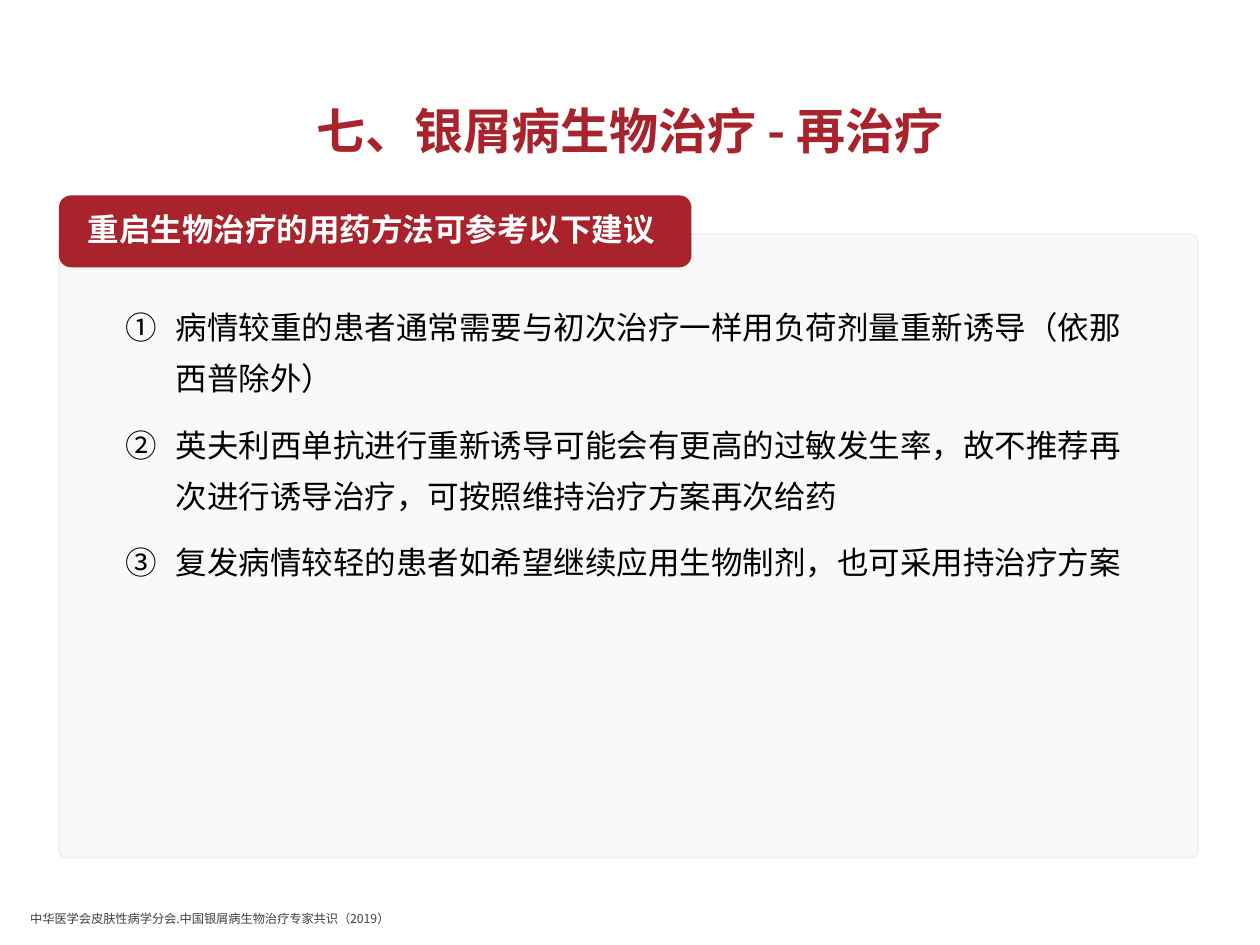
"""Build a slide of advice on restarting biologic treatment for psoriasis."""
from dataclasses import dataclass
from typing import Any, Optional

from lxml import etree
from pptx import Presentation
from pptx.dml.color import RGBColor
from pptx.enum import shapes, text
from pptx.oxml import ns
from pptx.util import Cm, Pt


@dataclass(frozen=True)
class Theme:
    font: str = "Noto Sans CJK SC"
    red: str = "A9232D"
    panel: str = "F9F9F9"
    edge: str = "F2F2F2"
    white: str = "FFFFFF"
    black: str = "000000"
    grey: str = "404040"
    title_size: float = 28
    body_size: float = 18
    source_size: float = 7


@dataclass(frozen=True)
class Box:
    left: float
    top: float
    width: float
    height: float

    def lengths(self) -> tuple:
        return tuple(Cm(v) for v in (self.left, self.top, self.width, self.height))


@dataclass(frozen=True)
class Style:
    size: float
    color: str
    bold: bool = False
    line_spacing: float = 1.0
    space_before: float = 0
    align: Any = text.PP_ALIGN.LEFT
    hanging: Optional[float] = None


THEME = Theme()
TITLE = "七、银屑病生物治疗 - 再治疗"
HEADING = "重启生物治疗的用药方法可参考以下建议"
ADVICE = (
    "病情较重的患者通常需要与初次治疗一样用负荷剂量重新诱导（依那西普除外）",
    "英夫利西单抗进行重新诱导可能会有更高的过敏发生率，故不推荐再次进行诱导治疗，可按照维持治疗方案再次给药",
    "复发病情较轻的患者如希望继续应用生物制剂，也可采用持治疗方案",
)
SOURCE = "中华医学会皮肤性病学分会.中国银屑病生物治疗专家共识（2019）"


def set_all(obj: Any, values: dict) -> None:
    """Set every named attribute on an object."""
    for name, value in values.items():
        setattr(obj, name, value)


def add_numbering(p: Any, hanging: float) -> None:
    """Give a paragraph a circled number and a hanging indent."""
    pPr = p._p.get_or_add_pPr()
    pPr.set("marL", str(Cm(hanging)))
    pPr.set("indent", str(-Cm(hanging)))
    etree.SubElement(pPr, ns.qn("a:buFont"), typeface=THEME.font)
    etree.SubElement(pPr, ns.qn("a:buAutoNum"), type="circleNumDbPlain")


def write(sp: Any, lines: tuple, style: Style, anchor: Any, margins: tuple) -> None:
    """Write styled paragraphs into a shape."""
    tf = sp.text_frame
    sides = ("margin_left", "margin_top", "margin_right", "margin_bottom")
    set_all(tf, {"word_wrap": True, "auto_size": text.MSO_AUTO_SIZE.NONE,
                 "vertical_anchor": anchor,
                 **{side: Cm(m) for side, m in zip(sides, margins)}})
    for i, line in enumerate(lines):
        p = tf.add_paragraph() if i else tf.paragraphs[0]
        if style.hanging is not None:
            add_numbering(p, style.hanging)
        set_all(p, {"alignment": style.align, "line_spacing": style.line_spacing,
                    "space_before": Pt(style.space_before if i else 0)})
        r = p.add_run()
        r.text = line
        set_all(r.font, {"name": THEME.font, "size": Pt(style.size), "bold": style.bold})
        r.font.color.rgb = RGBColor.from_string(style.color)
        latin = r._r.rPr.find(ns.qn("a:latin"))
        latin.addnext(latin.makeelement(ns.qn("a:ea"), {"typeface": THEME.font}))


def add_panel(s: Any, box: Box, fill: str, edge: Optional[str] = None,
              corner: Optional[float] = None) -> Any:
    """Draw a flat rounded rectangle."""
    sp = s.shapes.add_shape(shapes.MSO_SHAPE.ROUNDED_RECTANGLE, *box.lengths())
    sp.shadow.inherit = False
    sp.fill.solid()
    sp.fill.fore_color.rgb = RGBColor.from_string(fill)
    if edge:
        sp.line.color.rgb = RGBColor.from_string(edge)
        sp.line.width = Pt(1)
    else:
        sp.line.fill.background()
    if corner is not None:
        sp.adjustments[0] = corner
    return sp


def main() -> None:
    """Build and save the slide."""
    prs = Presentation()
    set_all(prs, {"slide_width": Cm(25.4), "slide_height": Cm(19.05)})
    s = prs.slides.add_slide(prs.slide_layouts[5])
    middle, top, bottom = (text.MSO_ANCHOR.MIDDLE, text.MSO_ANCHOR.TOP,
                           text.MSO_ANCHOR.BOTTOM)
    inset = (0.25, 0.13, 0.25, 0.13)

    title = s.shapes.title
    names = ("left", "top", "width", "height")
    set_all(title, dict(zip(names, Box(1.75, 1.73, 21.9, 1.93).lengths())))
    write(title, (TITLE,), Style(THEME.title_size, THEME.red, True, 0.9,
                                 align=text.PP_ALIGN.CENTER), middle, inset)

    source = s.shapes.add_textbox(*Box(0.36, 17.53, 23.83, 1.27).lengths())
    write(source, (SOURCE,), Style(THEME.source_size, THEME.grey), bottom, inset)

    add_panel(s, Box(1.19, 4.72, 22.96, 12.57), THEME.panel, THEME.edge, 0.012)
    heading = add_panel(s, Box(1.19, 3.94, 12.75, 1.45), THEME.red)
    write(heading, (HEADING,), Style(THEME.body_size, THEME.white, True, 0.9),
          middle, (0.51, 0.13, 0.25, 0.13))

    advice = s.shapes.add_textbox(*Box(2.54, 5.94, 20.32, 10.13).lengths())
    write(advice, ADVICE, Style(THEME.body_size, THEME.black, line_spacing=1.35,
                                space_before=9, hanging=1), top, (0, 0, 0, 0))
    prs.save("out.pptx")


if __name__ == "__main__":
    main()
